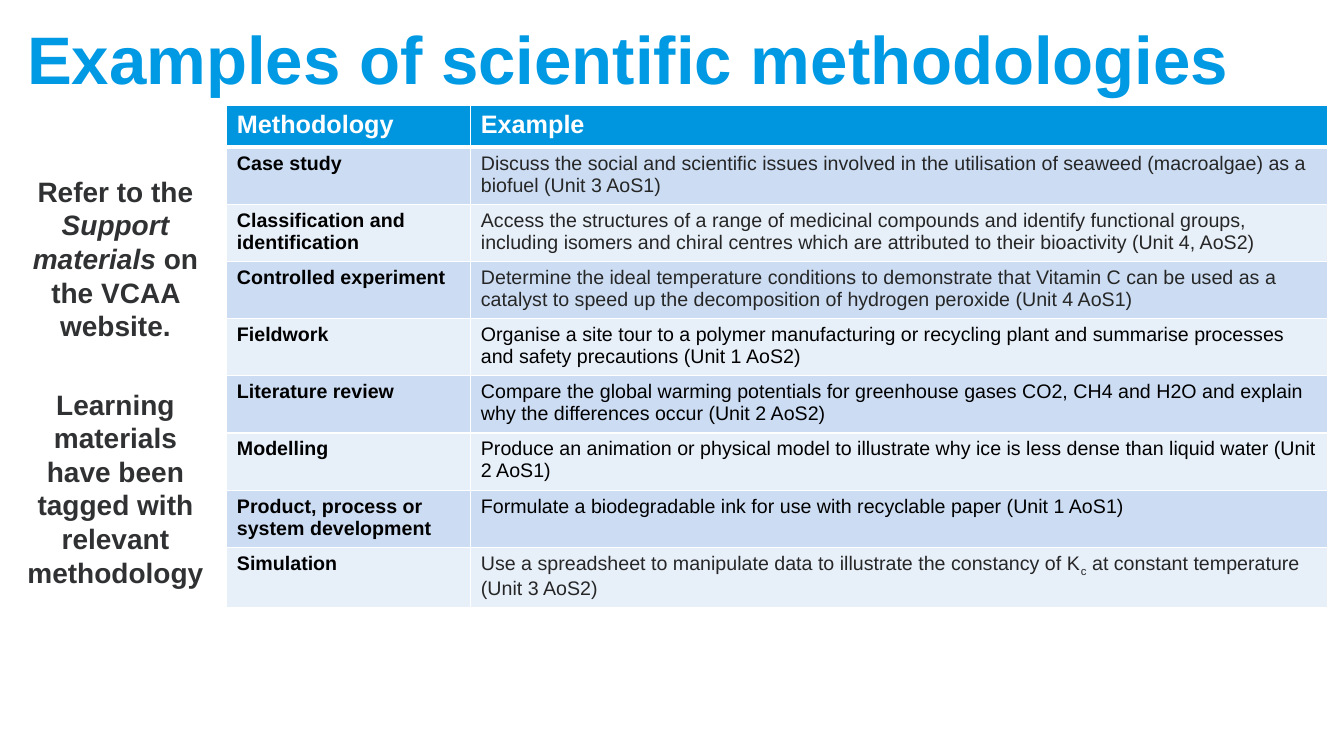
from lxml.etree import SubElement
from pptx import Presentation
from pptx.dml.color import RGBColor
from pptx.enum.text import MSO_ANCHOR as ANCHOR, PP_ALIGN as ALIGN
from pptx.oxml.ns import qn
from pptx.util import Inches, Pt

TITLE_BLUE = RGBColor(0x00, 0x99, 0xE3)
HEADER_BLUE = RGBColor(0x00, 0x96, 0xDF)
BAND_DARK = RGBColor(0xCC, 0xDD, 0xF3)
BAND_LIGHT = RGBColor(0xE7, 0xEF, 0xF9)
CHARCOAL = RGBColor(0x30, 0x31, 0x32)
GREY = RGBColor(0x26, 0x26, 0x26)
BLACK = RGBColor(0x00, 0x00, 0x00)
WHITE = RGBColor(0xFF, 0xFF, 0xFF)


def add_run(p, text, size, color, bold=True):
    r = p.add_run()
    r.text = text
    r.font.name = "Arial"
    r.font.size = Pt(size)
    r.font.bold = bold
    r.font.color.rgb = color
    return r


def add_border(cell, side, width):
    ln = SubElement(cell._tc.get_or_add_tcPr(), qn(f"a:ln{side}"), w=str(Pt(width)))
    fill = SubElement(ln, qn("a:solidFill"))
    SubElement(fill, qn("a:srgbClr"), val=str(WHITE))


prs = Presentation()
prs.slide_width, prs.slide_height = Inches(13.33), Inches(7.5)
s = prs.slides.add_slide(prs.slide_layouts[6])

# Title
tf = s.shapes.add_textbox(Inches(0.17), Inches(0.12), Inches(12.7), Inches(0.9)).text_frame
tf.word_wrap = True
tf.vertical_anchor = ANCHOR.MIDDLE
add_run(tf.paragraphs[0], "Examples of scientific methodologies", 48, TITLE_BLUE)

# Side note
tf = s.shapes.add_textbox(Inches(0.17), Inches(1.68), Inches(1.95), Inches(3.2)).text_frame
tf.word_wrap = True
tf.margin_left = tf.margin_right = Inches(0.09)
support = tf.paragraphs[0]
add_run(support, "Refer to the ", 20, CHARCOAL)
add_run(support, "Support materials ", 20, CHARCOAL).font.italic = True
add_run(support, "on the VCAA website.", 20, CHARCOAL)
tagged = tf.add_paragraph()
tagged.space_before = Pt(32)
add_run(tagged, "Learning materials have been tagged with relevant methodology", 20, CHARCOAL)
for p in tf.paragraphs:
    p.alignment = ALIGN.CENTER
    p.line_spacing = Pt(24)

# Methodology table: name, example, example colour
rows = [
    ("Methodology", "Example", WHITE),
    ("Case study", "Discuss the social and scientific issues involved in the utilisation of "
     "seaweed (macroalgae) as a biofuel (Unit 3 AoS1)", GREY),
    ("Classification and identification", "Access the structures of a range of medicinal "
     "compounds and identify functional groups, including isomers and chiral centres which "
     "are attributed to their bioactivity (Unit 4, AoS2)", GREY),
    ("Controlled experiment", "Determine the ideal temperature conditions to demonstrate that "
     "Vitamin C can be used as a catalyst to speed up the decomposition of hydrogen peroxide "
     "(Unit 4 AoS1)", GREY),
    ("Fieldwork", "Organise a site tour to a polymer manufacturing or recycling plant and "
     "summarise processes and safety precautions (Unit 1 AoS2)", BLACK),
    ("Literature review", "Compare the global warming potentials for greenhouse gases CO2, CH4 "
     "and H2O and explain why the differences occur (Unit 2 AoS2)", BLACK),
    ("Modelling", "Produce an animation or physical model to illustrate why ice is less dense "
     "than liquid water (Unit 2 AoS1)", BLACK),
    ("Product, process or system development", "Formulate a biodegradable ink for use with "
     "recyclable paper (Unit 1 AoS1)", BLACK),
    ("Simulation", "Use a spreadsheet to manipulate data to illustrate the constancy of K", GREY),
]
HEADER_H, ROW_H = 0.41, 0.53
table = s.shapes.add_table(len(rows), 2, Inches(2.25), Inches(1.05), Inches(10.92),
                           Inches(HEADER_H + ROW_H * (len(rows) - 1))).table
table.columns[0].width, table.columns[1].width = Inches(2.42), Inches(8.5)

for i, (name, example, color) in enumerate(rows):
    header = i == 0
    table.rows[i].height = Inches(HEADER_H if header else ROW_H)
    for j, text in enumerate((name, example)):
        cell = table.cell(i, j)
        for side in "LRTB":
            thick = (i, side) in ((0, "B"), (1, "T"))
            add_border(cell, side, 3 if thick else 1)
        cell.fill.solid()
        cell.fill.fore_color.rgb = HEADER_BLUE if header else BAND_DARK if i % 2 else BAND_LIGHT
        text_color = color if header or j else BLACK
        add_run(cell.text_frame.paragraphs[0], text, 18 if header else 14, text_color,
                header or j == 0)

# Equilibrium constant with its subscript ends the last example
p = table.cell(len(rows) - 1, 1).text_frame.paragraphs[0]
subscript = add_run(p, "c", 14, GREY, False)
subscript.font._element.set("baseline", "-25000")
add_run(p, " at constant temperature (Unit 3 AoS2)", 14, GREY, False)

prs.save("out.pptx")
